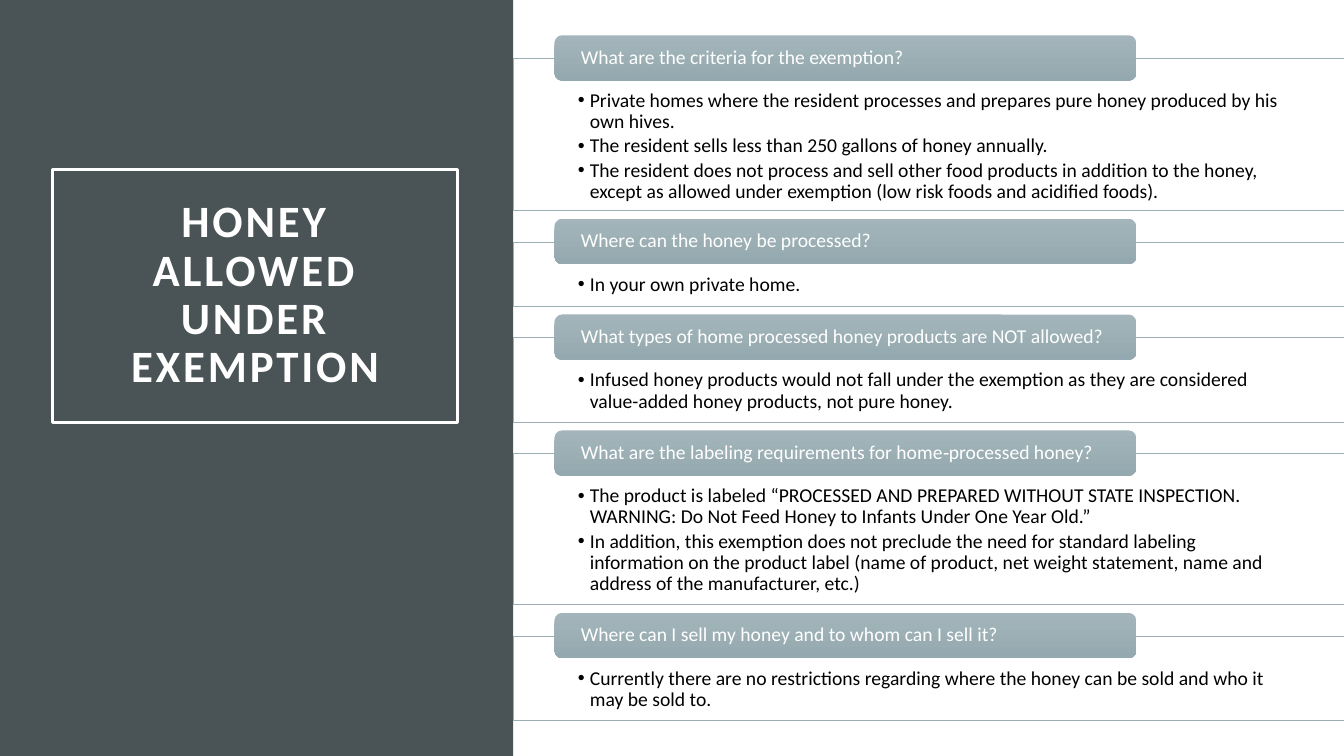
from lxml import etree
from pptx import Presentation
from pptx.dml.color import RGBColor
from pptx.enum.shapes import MSO_SHAPE as SHAPE
from pptx.enum.text import MSO_ANCHOR as ANCHOR, MSO_AUTO_SIZE as AUTO, PP_ALIGN as ALIGN
from pptx.oxml.ns import qn
from pptx.util import Emu, Pt

PX = 9144
WIDTH, HEIGHT = 1333, 750
SIDE_W = 509
PANEL_W, PANEL_TOP, PANEL_GAP = 825, 58, 31
BAR_X, BAR_W, BAR_H, BAR_RISE = 550, 577, 45, 23
WHITE, BLACK, SLATE, MIST = "FFFFFF", "000000", "4A5356", "9BAFB5"
BAR_STOPS = ("A3B5BB", "93A9AF")

SECTIONS = [
    (151, "What are the criteria for the exemption?", [
        "Private homes where the resident processes and prepares pure honey produced by his own hives.",
        "The resident sells less than 250 gallons of honey annually.",
        "The resident does not process and sell other food products in addition to the honey, "
        "except as allowed under exemption (low risk foods and acidified foods).",
    ]),
    (64, "Where can the honey be processed?", ["In your own private home."]),
    (84, "What types of home processed honey products are NOT allowed?", [
        "Infused honey products would not fall under the exemption as they are considered "
        "value-added honey products, not pure honey.",
    ]),
    (150, "What are the labeling requirements for home‐processed honey?", [
        "The product is labeled “PROCESSED AND PREPARED WITHOUT STATE INSPECTION. "
        "WARNING: Do Not Feed Honey to Infants Under One Year Old.”",
        "In addition, this exemption does not preclude the need for standard labeling information "
        "on the product label (name of product, net weight statement, name and address of the "
        "manufacturer, etc.)",
    ]),
    (84, "Where can I sell my honey and to whom can I sell it?", [
        "Currently there are no restrictions regarding where the honey can be sold and who it may be sold to.",
    ]),
]


def px(n):
    """Turn whole pixels into EMU."""
    return Emu(n * PX)


def rgb(value):
    """Turn a hex string into a colour."""
    return RGBColor.from_string(value)


def add_box(s, kind, x, y, w, h):
    """Add a preset shape with no shadow and no line."""
    sp = s.shapes.add_shape(kind, px(x), px(y), px(w), px(h))
    sp.shadow.inherit = False
    sp.line.fill.background()
    return sp


def set_fill(sp, color, alpha=None):
    """Fill a shape with one colour, optionally at a percentage of opacity."""
    sp.fill.solid()
    sp.fill.fore_color.rgb = rgb(color)
    if alpha is not None:
        clr = sp.element.spPr.find(qn("a:solidFill"))[0]
        etree.SubElement(clr, qn("a:alpha")).set("val", str(alpha * 1000))


def set_line(sp, color, width):
    """Outline a shape."""
    sp.line.color.rgb = rgb(color)
    sp.line.width = Pt(width)


def add_bullet(p, indent):
    """Give a paragraph a round bullet with a hanging indent."""
    p.level = 1
    pPr = p._p.get_or_add_pPr()
    pPr.set("marL", str(px(indent)))
    pPr.set("indent", str(px(-indent)))
    etree.SubElement(pPr, qn("a:buFont")).set("typeface", "Arial")
    etree.SubElement(pPr, qn("a:buChar")).set("char", "•")


def write(sp, *texts, size=14, color=WHITE, bold=False, align=ALIGN.LEFT, anchor=ANCHOR.MIDDLE,
          insets=(0, 0, 0, 0), after=0, spacing=0, bullet=False):
    """Write one paragraph per text into a shape."""
    tf = sp.text_frame
    tf.word_wrap, tf.auto_size, tf.vertical_anchor = True, AUTO.NONE, anchor
    tf.margin_left, tf.margin_top, tf.margin_right, tf.margin_bottom = map(px, insets)
    for i, text in enumerate(texts):
        p = tf.add_paragraph() if i else tf.paragraphs[0]
        p.alignment, p.line_spacing = align, 0.9
        p.space_before, p.space_after = Pt(0), Pt(after)
        if bullet:
            add_bullet(p, 12)
        r = p.add_run()
        r.text = text
        r.font.name, r.font.size, r.font.bold = "Calibri", Pt(size), bold
        r.font.color.rgb = rgb(color)
        if spacing:
            r.font._element.set("spc", str(spacing * 100))


def add_title(s):
    """Place the framed title on the dark side panel."""
    side = add_box(s, SHAPE.RECTANGLE, 0, 0, SIDE_W, HEIGHT)
    set_fill(side, SLATE)
    title = s.shapes.title
    title.element.addprevious(side.element)
    title.left, title.top, title.width, title.height = map(px, (52, 168, 402, 251))
    set_line(title, WHITE, 2.5)
    write(title, "HONEY ALLOWED UNDER EXEMPTION", size=32, bold=True, align=ALIGN.CENTER,
          insets=(20, 20, 20, 20), spacing=2)


def add_section(s, top, height, question, answers):
    """Add an answer panel with its question bar across the top edge."""
    panel = add_box(s, SHAPE.RECTANGLE, SIDE_W, top, PANEL_W, height)
    set_fill(panel, WHITE, alpha=90)
    set_line(panel, MIST, 0.5)
    write(panel, *answers, color=BLACK, anchor=ANCHOR.TOP, insets=(64, 32, 64, 11),
          after=2.1, bullet=True)
    bar = add_box(s, SHAPE.ROUNDED_RECTANGLE, BAR_X, top - BAR_RISE, BAR_W, BAR_H)
    bar.fill.gradient()
    bar.fill.gradient_angle = 270
    for stop, color in zip(bar.fill.gradient_stops, BAR_STOPS):
        stop.color.rgb = rgb(color)
    write(bar, question, insets=(24, 0, 24, 0))


def main():
    """Build and save the slide."""
    prs = Presentation()
    prs.slide_width, prs.slide_height = px(WIDTH), px(HEIGHT)
    s = prs.slides.add_slide(prs.slide_layouts[5])
    add_title(s)
    top = PANEL_TOP
    for height, question, answers in SECTIONS:
        add_section(s, top, height, question, answers)
        top += height + PANEL_GAP
    prs.save("out.pptx")


if __name__ == "__main__":
    main()
